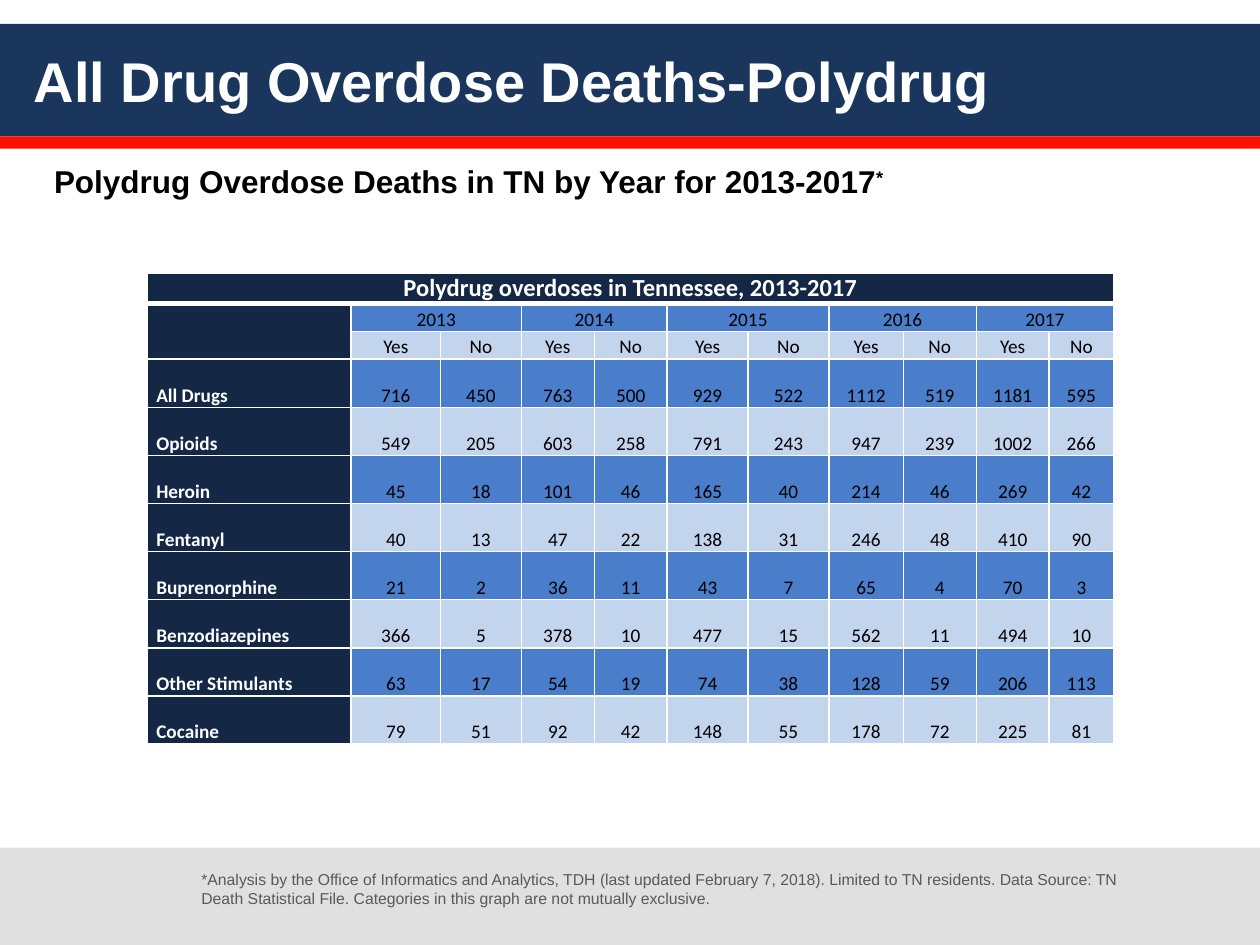
from lxml import etree
from pptx import Presentation
from pptx import util as u
from pptx.dml.color import RGBColor
from pptx.enum import shapes, text
from pptx.oxml.ns import qn

NAVY, BLUE, PALE, WHITE, BLACK = "142846", "4A7ECA", "C3D4ED", "FFFFFF", "000000"


def paint(part, tone):
    part.solid()
    part.fore_color.rgb = RGBColor.from_string(tone)


def style(para, size, tone, bold=False, face="Arial"):
    for run in para.runs:
        run.font.name, run.font.size, run.font.bold = face, u.Pt(size), bold
        paint(run.font.fill, tone)


deck = Presentation()
deck.slide_width, deck.slide_height = u.Cm(25.4), u.Cm(19.05)
slide = deck.slides.add_slide(deck.slide_layouts[5])

for top, high, tone in [(0.48, 2.27, "1B365D"), (2.75, 0.25, "FF0F00"), (17.09, 1.96, "E0E0E0")]:
    bar = slide.shapes.add_shape(shapes.MSO_SHAPE.RECTANGLE, 0, u.Cm(top), u.Cm(25.4), u.Cm(high))
    bar.shadow.inherit = False
    paint(bar.fill, tone)
    bar.line.fill.background()

title = slide.shapes.title
slide.shapes._spTree.append(title._element)
title.left, title.top, title.width, title.height = u.Cm(0.43), u.Cm(0.48), u.Cm(24.56), u.Cm(2.29)
frame = title.text_frame
frame.text = "All Drug Overdose Deaths-Polydrug"
frame.auto_size = text.MSO_AUTO_SIZE.NONE
frame.vertical_anchor = text.MSO_ANCHOR.MIDDLE
frame.paragraphs[0].alignment = text.PP_ALIGN.LEFT
style(frame.paragraphs[0], 32, WHITE, True)

head = slide.shapes.add_textbox(u.Cm(0.84), u.Cm(3.15), u.Cm(18.85), u.Cm(1.02))
head.text_frame.word_wrap = True
para = head.text_frame.paragraphs[0]
para.text = "Polydrug Overdose Deaths in TN by Year for 2013-2017"
star = para.add_run()
star.text = "*"
style(para, 18, BLACK, True)
star._r.get_or_add_rPr().set("baseline", "30000")

note = slide.shapes.add_textbox(u.Cm(3.81), u.Cm(17.4), u.Cm(19.25), u.Cm(1.02))
note.text_frame.word_wrap = True
note.text_frame.text = (
    "*Analysis by the Office of Informatics and Analytics, TDH (last updated February 7, 2018). "
    "Limited to TN residents. Data Source: TN Death Statistical File. "
    "Categories in this graph are not mutually exclusive.")
style(note.text_frame.paragraphs[0], 9, "595959")

drugs = [
    ("All Drugs", 716, 450, 763, 500, 929, 522, 1112, 519, 1181, 595),
    ("Opioids", 549, 205, 603, 258, 791, 243, 947, 239, 1002, 266),
    ("Heroin", 45, 18, 101, 46, 165, 40, 214, 46, 269, 42),
    ("Fentanyl", 40, 13, 47, 22, 138, 31, 246, 48, 410, 90),
    ("Buprenorphine", 21, 2, 36, 11, 43, 7, 65, 4, 70, 3),
    ("Benzodiazepines", 366, 5, 378, 10, 477, 15, 562, 11, 494, 10),
    ("Other Stimulants", 63, 17, 54, 19, 74, 38, 128, 59, 206, 113),
    ("Cocaine", 79, 51, 92, 42, 148, 55, 178, 72, 225, 81),
]
years = [""]
for year in range(2013, 2018):
    years += [year, ""]
rows = [["Polydrug overdoses in Tennessee, 2013-2017"] + [""] * 10,
        years, [""] + ["Yes", "No"] * 5, *drugs]
wide = [4.11, 1.8, 1.63, 1.47, 1.47, 1.63, 1.63, 1.5, 1.47, 1.47, 1.3]
tall = [0.61, 0.56, 0.56] + [0.97] * len(drugs)

grid = slide.shapes.add_table(len(rows), len(wide), u.Cm(2.97), u.Cm(5.51),
                              u.Cm(sum(wide)), u.Cm(sum(tall))).table
for col, size in zip(grid.columns, wide):
    col.width = u.Cm(size)
for row, size in zip(grid.rows, tall):
    row.height = u.Cm(size)

for r, row in enumerate(rows):
    for c, value in enumerate(row):
        cell = grid.cell(r, c)
        cell.margin_left = cell.margin_right = u.Cm(0.18)
        cell.margin_top = cell.margin_bottom = 0
        cell.vertical_anchor = text.MSO_ANCHOR.BOTTOM if r else text.MSO_ANCHOR.TOP
        for side in "LRTB":
            thick = 3 if (r, side) in [(0, "B"), (1, "T")] else 1
            line = etree.SubElement(cell._tc.get_or_add_tcPr(), qn("a:ln" + side), w=str(u.Pt(thick)))
            fill = etree.SubElement(line, qn("a:solidFill"))
            etree.SubElement(fill, qn("a:srgbClr"), val=WHITE)
        dark = r == 0 or c == 0
        paint(cell.fill, NAVY if dark else BLUE if r % 2 else PALE)
        para = cell.text_frame.paragraphs[0]
        if value == "":
            etree.SubElement(para._p, qn("a:endParaRPr"), sz="1100")
            continue
        para.text = str(value)
        para.alignment = text.PP_ALIGN.LEFT if r and c == 0 else text.PP_ALIGN.CENTER
        style(para, 11 if r else 14, WHITE if dark else BLACK, dark, "Calibri")

grid.cell(0, 0).merge(grid.cell(0, 10))
grid.cell(1, 0).merge(grid.cell(2, 0))
for c in range(1, 11, 2):
    grid.cell(1, c).merge(grid.cell(1, c + 1))

deck.save("out.pptx")
